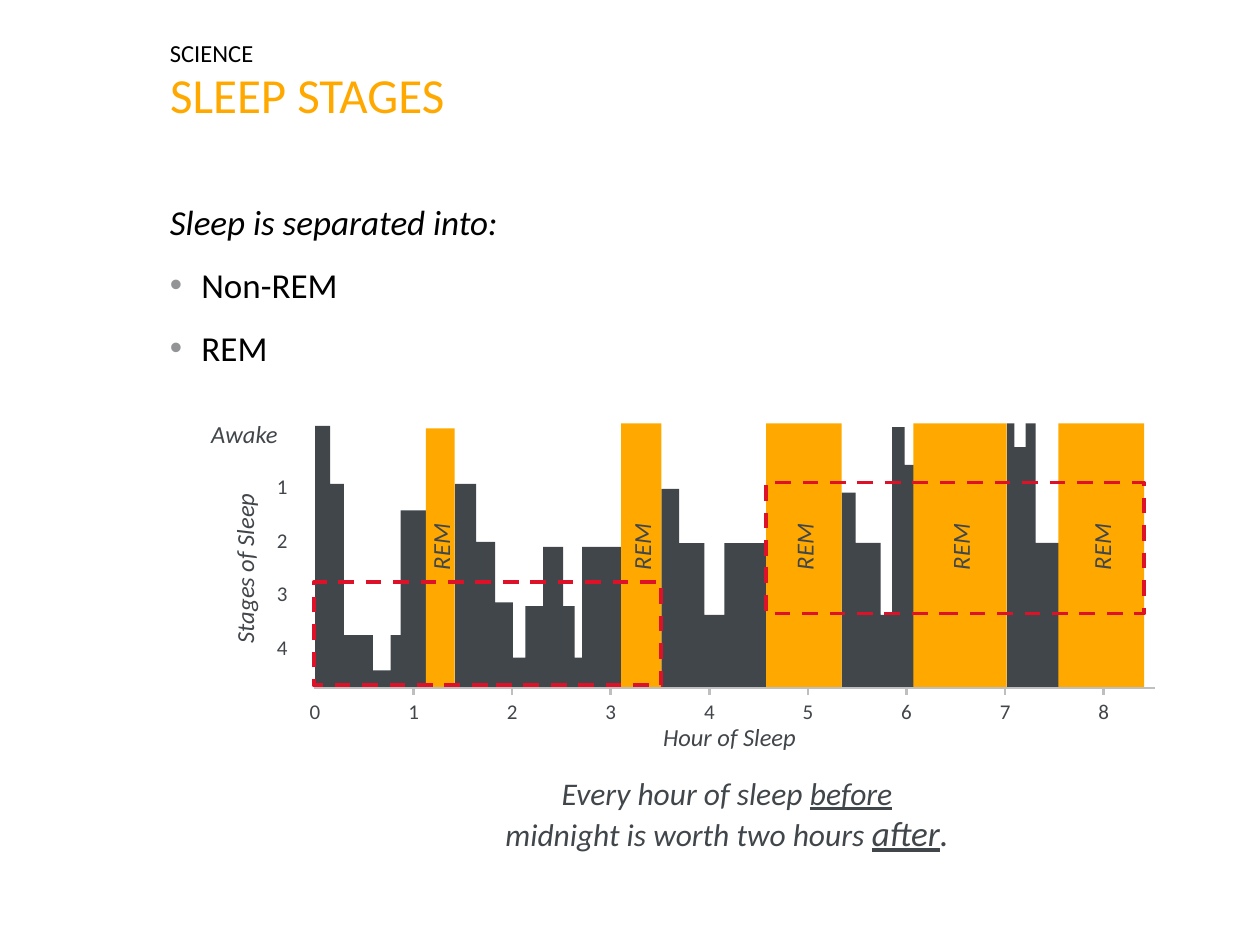
"""Build the sleep stages slide with a hypnogram drawn on an hour axis."""
from lxml.etree import SubElement
from pptx import Presentation
from pptx.dml.color import RGBColor
from pptx.enum.dml import MSO_LINE
from pptx.enum.shapes import MSO_CONNECTOR, MSO_SHAPE
from pptx.enum.text import MSO_ANCHOR, PP_ALIGN
from pptx.oxml.ns import qn
from pptx.util import Inches, Pt

COLORS = {"black": "000000", "slate": "41464B", "amber": "FFA900",
          "axis": "BFBFBF", "bullet": "929496", "red": "DD1228"}
FONT = "Calibri"

KICKER = "SCIENCE"
TITLE = "SLEEP STAGES"
INTRO = "Sleep is separated into:"
BULLETS = ["Non-REM", "REM"]
QUOTE = [[("Every hour of sleep ", 18, False), ("before", 18, True)],
         [("midnight is worth two hours ", 18, False), ("after", 20, True), (".", 20, False)]]

LEFT, CONTENT_WIDTH = 1.25, 8.25
AXIS_LEFT, AXIS_RIGHT, BASELINE = 2.49, 9.17, 5.46
HOUR_ORIGIN, HOURS = 2.5, 8
HOUR_STEP = (8.76 - HOUR_ORIGIN) / HOURS
TICK_TOP, TICK_BOTTOM = 5.44, 5.52
STAGE_X, STAGE_TOP, STAGE_STEP = 2.24, 3.86, 0.425
STAGES = ["1", "2", "3", "4"]
REM_LABEL_Y = 4.34

NON_REM = [
    (2.5, [(2.62, 3.38), (2.73, 3.84), (2.96, 5.04), (3.1, 5.32), (3.18, 5.04), (3.38, 4.05)]),
    (3.61, [(3.78, 3.84), (3.93, 4.3), (4.07, 4.78), (4.17, 5.22), (4.31, 4.81),
            (4.47, 4.34), (4.56, 4.81), (4.62, 5.22), (4.93, 4.34)]),
    (5.25, [(5.39, 3.88), (5.59, 4.31), (5.75, 4.88), (6.08, 4.31)]),
    (6.68, [(6.79, 3.91), (6.99, 4.31), (7.08, 4.88), (7.18, 3.39), (7.26, 3.69)]),
    (7.99, [(8.05, 3.36), (8.14, 3.55), (8.22, 3.36), (8.41, 4.31)]),
]
REM = [(3.38, 3.61, 3.4), (4.93, 5.25, 3.36), (6.08, 6.68, 3.36),
       (7.25, 7.99, 3.36), (8.4, 9.08, 3.36)]
HIGHLIGHTS = [(6.08, 3.83, 3, 1.04), (2.49, 4.62, 2.76, 0.82)]


def color(name):
    return RGBColor.from_string(COLORS[name])


def set_font(font, size, color_name, italic=False):
    font.name, font.size, font.italic = FONT, Pt(size), italic
    font.color.rgb = color(color_name)


def add_text_box(slide, left, top, width, height):
    box = slide.shapes.add_textbox(Inches(left), Inches(top), Inches(width), Inches(height))
    box.text_frame.word_wrap = True
    return box.text_frame


def add_label(slide, text, center_x, center_y, width=0.42, size=12, italic=False, rotation=0):
    height = 0.28 if size == 12 else 0.34
    frame = add_text_box(slide, center_x - width / 2, center_y - height / 2, width, height)
    frame.word_wrap = False
    frame.vertical_anchor = MSO_ANCHOR.MIDDLE
    paragraph = frame.paragraphs[0]
    paragraph.text, paragraph.alignment = text, PP_ALIGN.CENTER
    set_font(paragraph.font, size, "slate", italic)
    slide.shapes[-1].rotation = rotation


def add_line(slide, start_x, start_y, end_x, end_y):
    line = slide.shapes.add_connector(MSO_CONNECTOR.STRAIGHT, Inches(start_x), Inches(start_y),
                                      Inches(end_x), Inches(end_y))
    line.line.color.rgb, line.line.width = color("axis"), Pt(1.5)
    SubElement(line._element.spPr, qn("a:effectLst"))


def add_rectangle(slide, left, top, width, height):
    shape = slide.shapes.add_shape(MSO_SHAPE.RECTANGLE, Inches(left), Inches(top),
                                   Inches(width), Inches(height))
    shape.shadow.inherit = False
    return shape


def fill_solid(shape, color_name):
    shape.fill.solid()
    shape.fill.fore_color.rgb = color(color_name)
    shape.line.fill.background()


def add_steps(slide, left, steps):
    points, edge = [], left
    for right, top in steps:
        points += [(edge, top), (right, top)]
        edge = right
    points.append((edge, BASELINE))
    builder = slide.shapes.build_freeform(Inches(left), Inches(BASELINE))
    builder.add_line_segments([(Inches(x), Inches(y)) for x, y in points], close=True)
    shape = builder.convert_to_shape()
    shape.shadow.inherit = False
    fill_solid(shape, "slate")


def add_bullet(paragraph):
    properties = paragraph._p.get_or_add_pPr()
    properties.set("marL", str(Inches(0.25)))
    properties.set("indent", str(-Inches(0.25)))
    bullet_color = SubElement(properties, qn("a:buClr"))
    SubElement(bullet_color, qn("a:srgbClr"), val=COLORS["bullet"])
    SubElement(properties, qn("a:buFont"), typeface="Arial")
    SubElement(properties, qn("a:buChar"), char="•")


def add_headings(slide):
    title = slide.shapes.title
    title.left, title.top = Inches(LEFT), Inches(0.25)
    title.width, title.height = Inches(CONTENT_WIDTH), Inches(0.99)
    title.text_frame.text = TITLE
    title.text_frame.vertical_anchor = MSO_ANCHOR.MIDDLE
    title.text_frame.paragraphs[0].alignment = PP_ALIGN.LEFT
    set_font(title.text_frame.paragraphs[0].font, 28, "amber")
    kicker = add_text_box(slide, LEFT, 0.25, 3.17, 0.4).paragraphs[0]
    kicker.text = KICKER
    set_font(kicker.font, 14, "black")


def add_body(slide):
    frame = add_text_box(slide, LEFT, 1.54, CONTENT_WIDTH, 1.5)
    frame.text = INTRO
    set_font(frame.paragraphs[0].font, 20, "black", italic=True)
    for text in BULLETS:
        paragraph = frame.add_paragraph()
        paragraph.text, paragraph.space_before = text, Pt(12)
        add_bullet(paragraph)
        set_font(paragraph.font, 20, "black")


def add_quote(slide):
    paragraph = add_text_box(slide, 2.08, 6.09, 7.38, 0.74).paragraphs[0]
    paragraph.alignment = PP_ALIGN.CENTER
    for index, line in enumerate(QUOTE):
        if index:
            paragraph.add_line_break()
        for text, size, underline in line:
            run = paragraph.add_run()
            run.text, run.font.underline = text, underline
            set_font(run.font, size, "slate", italic=True)


def add_hypnogram(slide):
    for hour in range(HOURS + 1):
        x = HOUR_ORIGIN + hour * HOUR_STEP
        if hour:
            add_line(slide, x, TICK_TOP, x, TICK_BOTTOM)
        add_label(slide, str(hour), x, 5.64)
    for left, steps in NON_REM:
        add_steps(slide, left, steps)
    for left, right, top in REM:
        fill_solid(add_rectangle(slide, left, top, right - left, BASELINE - top), "amber")
        add_label(slide, "REM", (left + right) / 2, REM_LABEL_Y, 0.57, 14, True, 270)
    for index, stage in enumerate(STAGES):
        add_label(slide, stage, STAGE_X, STAGE_TOP + index * STAGE_STEP)
    add_label(slide, "Awake", 1.94, 3.44, 1.19, 14, True)
    add_label(slide, "Hour of Sleep", 5.79, 5.85, 1.51, 14, True)
    add_label(slide, "Stages of Sleep", 1.94, 4.51, 1.69, 14, True, 270)
    add_line(slide, AXIS_LEFT, BASELINE, AXIS_RIGHT, BASELINE)
    for bounds in HIGHLIGHTS:
        frame = add_rectangle(slide, *bounds)
        frame.fill.background()
        frame.line.color.rgb, frame.line.width = color("red"), Pt(2.25)
        frame.line.dash_style = MSO_LINE.DASH


def main():
    presentation = Presentation()
    presentation.slide_width, presentation.slide_height = Inches(10), Inches(7.5)
    slide = presentation.slides.add_slide(presentation.slide_layouts[5])
    add_headings(slide)
    add_body(slide)
    add_quote(slide)
    add_hypnogram(slide)
    presentation.save("out.pptx")


if __name__ == "__main__":
    main()
